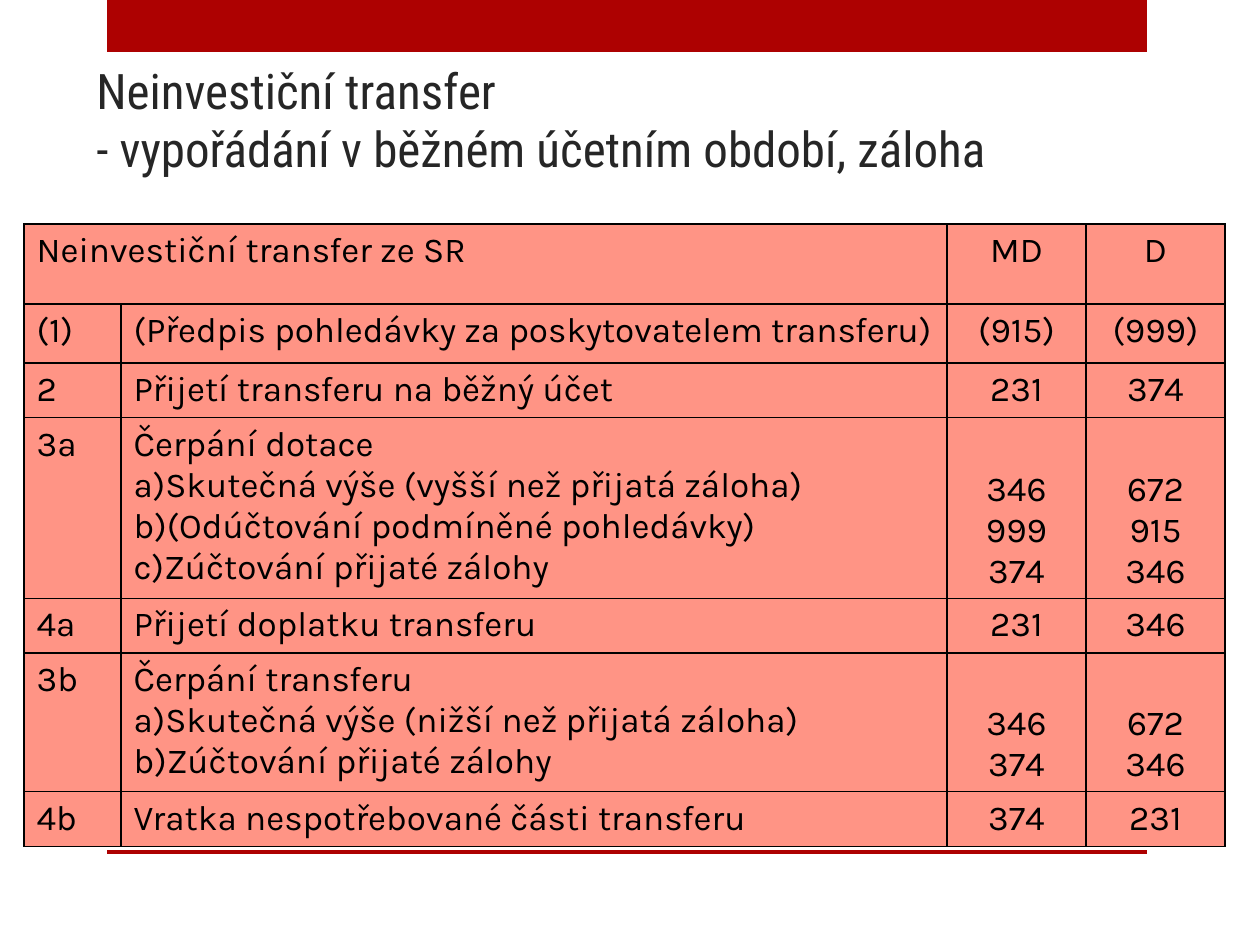
from lxml import etree
from pptx import Presentation
from pptx.dml.color import RGBColor
from pptx.enum.shapes import MSO_SHAPE
from pptx.enum.text import MSO_ANCHOR, PP_ALIGN
from pptx.oxml.ns import qn
from pptx.util import Emu, Pt

RECTANGLE = MSO_SHAPE.RECTANGLE
TOP, BOTTOM = MSO_ANCHOR.TOP, MSO_ANCHOR.BOTTOM
LEFT, CENTER = PP_ALIGN.LEFT, PP_ALIGN.CENTER
EMU_PER_PX = 914400 / 126


def px(length):
    return Emu(round(length * EMU_PER_PX))


def color(hex_code):
    return RGBColor.from_string(hex_code)


def write(frame, text, *, font, size, ink, align=LEFT, lettered_from=None):
    """Fill a frame line by line; lines from lettered_from on get a), b), c)."""
    for index, line in enumerate(text.split("\n")):
        paragraph = frame.paragraphs[0] if index == 0 else frame.add_paragraph()
        paragraph.alignment = align
        if lettered_from is not None and index >= lettered_from:
            properties = paragraph._p.get_or_add_pPr()
            properties.set("marL", "0")
            properties.set("indent", "0")
            etree.SubElement(properties, qn("a:buAutoNum"), type="alphaLcParenR")
        run = paragraph.add_run()
        run.text = line
        run.font.name = font
        run.font.size = Pt(size)
        run.font.color.rgb = color(ink)


class SlideBuilder:
    ACCENT = "AD0101"
    CELL_FILL = "FF9485"
    GRID = "000000"
    TITLE_STYLE = {"font": "Roboto Condensed", "size": 28, "ink": "262626"}
    CELL_STYLE = {"font": "Karla", "size": 20, "ink": "000000"}

    def __init__(self, slide):
        self.slide = slide

    def bar(self, left, top, width, height):
        bar = self.slide.shapes.add_shape(
            RECTANGLE, px(left), px(top), px(width), px(height))
        bar.shadow.inherit = False
        bar.fill.solid()
        bar.fill.fore_color.rgb = color(self.ACCENT)
        bar.line.fill.background()

    def title(self, text, left, top, width, height):
        box = self.slide.shapes.add_textbox(
            px(left), px(top), px(width), px(height))
        box.text_frame.word_wrap = True
        box.text_frame.vertical_anchor = BOTTOM
        write(box.text_frame, text, **self.TITLE_STYLE)

    def borders(self, cell):
        properties = cell._tc.get_or_add_tcPr()
        for position, side in enumerate(("lnL", "lnR", "lnT", "lnB")):
            line = etree.Element(qn(f"a:{side}"), w=str(Pt(1)))
            fill = etree.SubElement(line, qn("a:solidFill"))
            etree.SubElement(fill, qn("a:srgbClr"), val=self.GRID)
            properties.insert(position, line)

    def table(self, rows, left, top, widths, heights):
        table = self.slide.shapes.add_table(
            len(rows), len(widths), px(left), px(top),
            px(sum(widths)), px(sum(heights))).table
        table.first_row = False
        table.horz_banding = False
        for column, width in zip(table.columns, widths):
            column.width = px(width)
        for row, height in zip(table.rows, heights):
            row.height = px(height)
        table.cell(0, 0).merge(table.cell(0, 1))
        for row_index, texts in enumerate(rows):
            for column_index, text in enumerate(texts):
                cell = table.cell(row_index, column_index)
                is_account = column_index >= 2
                cell.fill.solid()
                cell.fill.fore_color.rgb = color(self.CELL_FILL)
                self.borders(cell)
                # Accounts line up with the lettered steps below the heading
                cell.vertical_anchor = BOTTOM if is_account and "\n" in text else TOP
                if text:
                    write(cell.text_frame, text, **self.CELL_STYLE,
                          align=CENTER if is_account else LEFT,
                          lettered_from=1 if column_index == 1 else None)


ENTRIES = [
    ("Neinvestiční transfer ze SR", "", "MD", "D"),
    ("(1)", "(Předpis pohledávky za poskytovatelem transferu)", "(915)", "(999)"),
    ("2", "Přijetí transferu na běžný účet", "231", "374"),
    ("3a", "Čerpání dotace\nSkutečná výše (vyšší než přijatá záloha)\n"
           "(Odúčtování podmíněné pohledávky)\nZúčtování přijaté zálohy",
     "346\n999\n374", "672\n915\n346"),
    ("4a", "Přijetí doplatku transferu", "231", "346"),
    ("3b", "Čerpání transferu\nSkutečná výše (nižší než přijatá záloha)\n"
           "Zúčtování přijaté zálohy",
     "346\n374", "672\n346"),
    ("4b", "Vratka nespotřebované části transferu", "374", "231"),
]


def main():
    presentation = Presentation()
    presentation.slide_width, presentation.slide_height = px(1260), px(945)
    builder = SlideBuilder(
        presentation.slides.add_slide(presentation.slide_layouts[6]))

    # Top band and bottom rule
    builder.bar(107, 0, 1040, 52)
    builder.bar(107, 850, 1040, 4)

    # Heading
    builder.title("Neinvestiční transfer\n"
                  "- vypořádání v běžném účetním období, záloha",
                  84, 55, 1121, 129)

    # Accounting entries; rows grow to fit their lines
    builder.table(ENTRIES, 24, 224, widths=[97, 826, 139, 139],
                  heights=[80, 59, 49, 118, 49, 118, 49])

    presentation.save("out.pptx")


if __name__ == "__main__":
    main()
